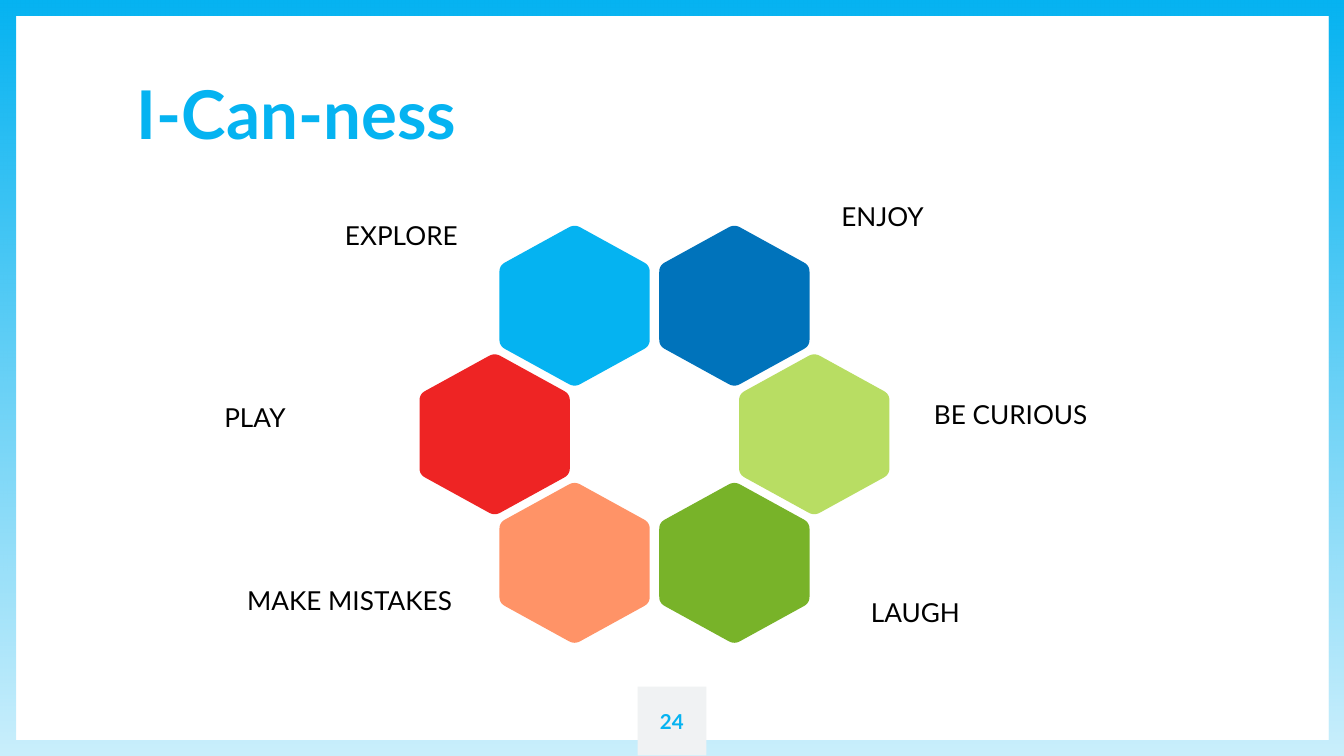
import pptx
import pptx.dml.color
import pptx.enum.shapes
import pptx.enum.text
import pptx.oxml.ns
import pptx.util
from lxml import etree

Cm = pptx.util.Cm
Shape = pptx.enum.shapes.MSO_SHAPE
Anchor = pptx.enum.text.MSO_ANCHOR
Align = pptx.enum.text.PP_ALIGN
qn = pptx.oxml.ns.qn

SKY = "05B3F1"
FONT = "Lato"

# Ring of hexagons (cm): centre, column and row steps
RING_X, RING_Y = 12.37, 8.21
STEP_X, STEP_Y = 1.51, 2.43
# One hexagon (cm): sharp corners around its centre, and length of rounding
CORNERS = [(0, -1.54), (1.42, -0.76), (1.42, 0.76),
           (0, 1.54), (-1.42, 0.76), (-1.42, -0.76)]
ROUNDING = 0.12

# Column, row, colour
HEXAGONS = [
    (1, -1, "0073BB"), (-1, -1, SKY),
    (-2, 0, "EE2424"), (2, 0, "B8DD63"),
    (1, 1, "78B329"), (-1, 1, "FF9367"),
]

# Text, left, top (cm)
LABELS = [
    ("ENJOY", 15.65, 3.53), ("BE CURIOUS", 17.4, 7.29),
    ("MAKE MISTAKES", 4.42, 10.8), ("PLAY", 3.99, 7.34),
    ("EXPLORE", 6.27, 3.89), ("LAUGH", 16.21, 11.02),
]


def rgb(value):
    return pptx.dml.color.RGBColor.from_string(value)


def paint(s, color):
    s.fill.solid()
    s.fill.fore_color.rgb = rgb(color)
    s.line.fill.background()
    s.shadow.inherit = False


def add_frame(slide, width, height):
    s = slide.shapes.add_shape(Shape.FRAME, 0, 0, width, height)
    s.adjustments[0] = 0.022
    paint(s, SKY)
    s.fill.gradient()
    s.fill.gradient_angle = 90
    for stop in s.fill.gradient_stops:
        stop.color.rgb = rgb(SKY)
    # The bottom end fades out
    bottom = next(s._element.iter(qn("a:srgbClr")))
    etree.SubElement(bottom, qn("a:alpha"), val="21000")


def add_text(slide, text, box, size, color, bold=False, inset=0.0, **paragraph):
    tf = slide.shapes.add_textbox(*map(Cm, box)).text_frame
    frame = {"word_wrap": True, "vertical_anchor": Anchor.TOP}
    frame.update((f"margin_{side}", Cm(inset))
                 for side in ("left", "top", "right", "bottom"))
    for name, value in frame.items():
        setattr(tf, name, value)
    p = tf.paragraphs[0]
    for name, value in paragraph.items():
        setattr(p, name, value)
    r = p.add_run()
    r.text = text
    font = {"name": FONT, "size": pptx.util.Pt(size), "bold": bold}
    for name, value in font.items():
        setattr(r.font, name, value)
    r.font.color.rgb = rgb(color)
    return tf


def toward(a, b, length):
    """Point on the way from a to b, at the given distance from a."""
    dx, dy = b[0] - a[0], b[1] - a[1]
    share = length / (dx * dx + dy * dy) ** 0.5
    return a[0] + dx * share, a[1] + dy * share


def rounded_outline(corners, length, steps=6):
    """Outline with each corner replaced by a short quadratic curve."""
    points = []
    for i, corner in enumerate(corners):
        start = toward(corner, corners[i - 1], length)
        end = toward(corner, corners[(i + 1) % len(corners)], length)
        for k in range(steps + 1):
            t = k / steps
            points.append(tuple(
                (1 - t) ** 2 * a + 2 * t * (1 - t) * b + t ** 2 * c
                for a, b, c in zip(start, corner, end)))
    return points


def add_hexagon(slide, x, y, color):
    points = [(Cm(x + dx), Cm(y + dy))
              for dx, dy in rounded_outline(CORNERS, ROUNDING)]
    builder = slide.shapes.build_freeform(*points[0])
    builder.add_line_segments(points[1:], close=True)
    paint(builder.convert_to_shape(), color)


def main():
    prs = pptx.Presentation()
    prs.slide_width, prs.slide_height = Cm(25.4), Cm(14.29)
    slide = prs.slides.add_slide(prs.slide_layouts[6])

    # Frame and page number
    add_frame(slide, prs.slide_width, prs.slide_height)
    number_box = (12.05, 12.98, 1.3, 1.3)
    paint(slide.shapes.add_shape(Shape.RECTANGLE, *map(Cm, number_box)), "F0F2F3")
    tf = add_text(slide, "24", number_box, 11, SKY, bold=True,
                  alignment=Align.CENTER)
    tf.vertical_anchor = Anchor.MIDDLE

    # Title
    add_text(slide, "I-Can-ness", (2.59, 1.55, 8.86, 1.4), 36, SKY, bold=True,
             line_spacing=0.9)

    # Hexagon ring
    for column, row, color in HEXAGONS:
        add_hexagon(slide, RING_X + column * STEP_X, RING_Y + row * STEP_Y, color)

    # Labels
    for text, left, top in LABELS:
        add_text(slide, text, (left, top, 4.67, 1.12), 14, "000000", inset=0.25)

    prs.save("out.pptx")


if __name__ == "__main__":
    main()
